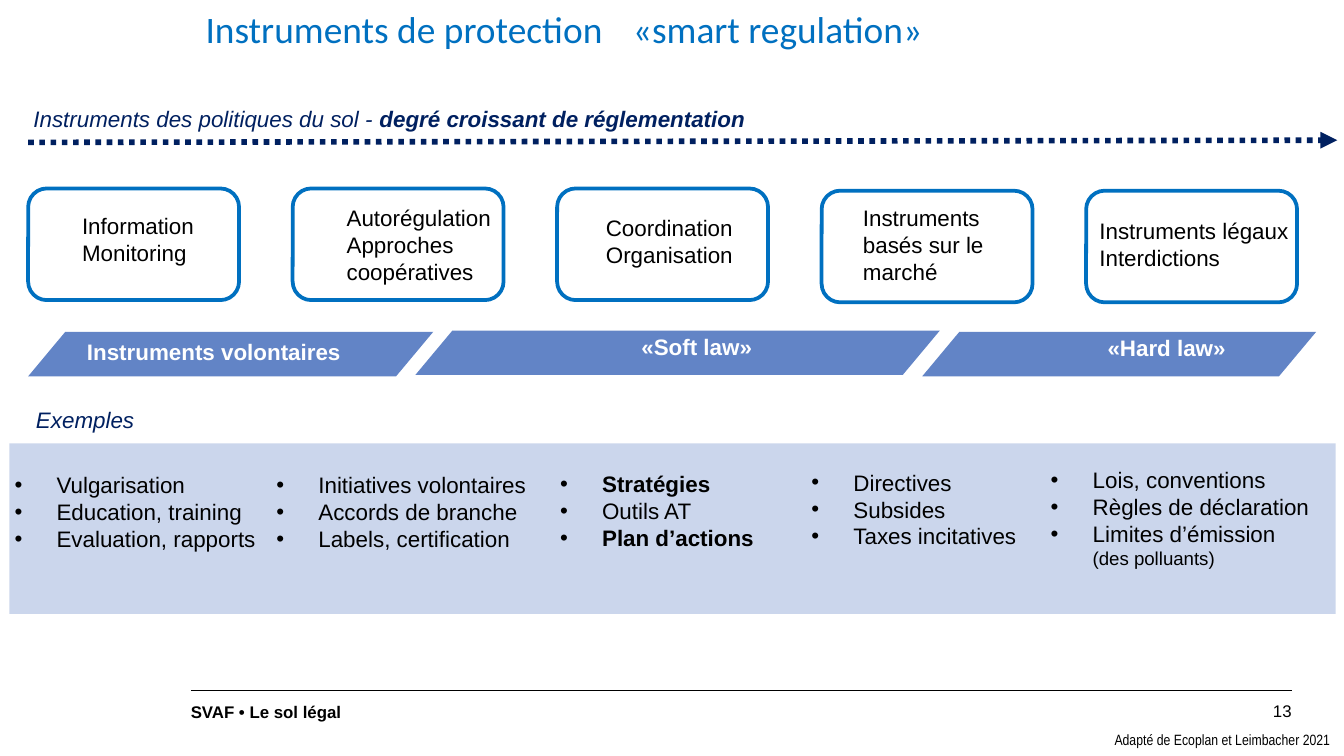
from dataclasses import dataclass

import pptx
import pptx.dml.color
import pptx.enum.dml
import pptx.enum.shapes
import pptx.enum.text
import pptx.oxml.xmlchemy
import pptx.util


@dataclass(frozen=True)
class Theme:
    black: str = "000000"
    white: str = "FFFFFF"
    navy: str = "002060"
    blue: str = "0070C0"
    band: str = "6284C6"
    panel: str = "CBD6EC"
    font: str = "Arial"
    title_font: str = "Calibri"
    source_font: str = "Arial Narrow"
    title: int = 20
    body: int = 12
    small: int = 10
    footer: int = 9
    source: int = 8


THEME = Theme()


def points(*lengths):
    return [pptx.util.Pt(length) for length in lengths]


def rgb(color):
    return pptx.dml.color.RGBColor.from_string(color)


def drawing_element(tag, **attributes):
    element = pptx.oxml.xmlchemy.OxmlElement(tag)
    for name, value in attributes.items():
        element.set(name, value)
    return element


def add_text(slide, box, paragraphs, size=THEME.body, color=THEME.black, font=THEME.font,
             align=pptx.enum.text.PP_ALIGN.LEFT, italic=False, bullet=False, inset=True,
             spacing=None):
    """Each paragraph is a list of (text, bold) or (text, bold, size) runs."""
    frame = slide.shapes.add_textbox(*points(*box)).text_frame
    frame.word_wrap = True
    if not inset:
        frame.margin_left = frame.margin_right = frame.margin_top = frame.margin_bottom = 0
    for index, runs in enumerate(paragraphs):
        paragraph = frame.add_paragraph() if index else frame.paragraphs[0]
        paragraph.alignment = align
        if spacing:
            paragraph.line_spacing = pptx.util.Pt(spacing)
        if bullet:
            properties = paragraph._p.get_or_add_pPr()
            indent = int(pptx.util.Pt(22.5))
            properties.set("marL", str(indent))
            properties.set("indent", str(-indent))
            properties.append(drawing_element("a:buFont", typeface=THEME.font))
            properties.append(drawing_element("a:buChar", char="•"))
        for text, bold, *own_size in runs:
            run = paragraph.add_run()
            run.text = text
            run.font.name = font
            run.font.size = pptx.util.Pt(own_size[0] if own_size else size)
            run.font.bold = bold
            run.font.italic = italic
            run.font.color.rgb = rgb(color)


def plain(*lines, bold=False):
    return [[(line, bold)] for line in lines]


def add_block(slide, kind, box, fill=None, line=None):
    block = slide.shapes.add_shape(kind, *points(*box))
    block.shadow.inherit = False
    if fill:
        block.fill.solid()
        block.fill.fore_color.rgb = rgb(fill)
    else:
        block.fill.background()
    if line:
        block.line.color.rgb = rgb(line)
        block.line.width = pptx.util.Pt(2)
    else:
        block.line.fill.background()
    return block


def add_rule(slide, start, end, color, width):
    rule = slide.shapes.add_connector(pptx.enum.shapes.MSO_CONNECTOR.STRAIGHT,
                                      *points(*start, *end))
    rule.line.color.rgb = rgb(color)
    rule.line.width = pptx.util.Pt(width)
    rule._element.spPr.append(drawing_element("a:effectLst"))
    return rule


def add_title(slide, box):
    left, top, width, height = box
    second = 229
    for offset, room, words in ((0, second, "Instruments de protection"),
                                (second, width - second, "«smart regulation»")):
        add_text(slide, (left + offset, top, room, height), plain(words),
                 THEME.title, THEME.blue, THEME.title_font)


def add_scale(slide, box):
    """Caption over the dotted arrow of growing regulation."""
    left, top, width, height = box
    add_text(slide, (left - 4.3, top, 397, 21.6),
             [[("Instruments des politiques du sol - ", False),
               ("degré croissant de réglementation", True)]],
             color=THEME.navy, italic=True)
    arrow = add_rule(slide, (left, top + height), (left + width, top + height - 1.2),
                     THEME.navy, 3)
    arrow.line.dash_style = pptx.enum.dml.MSO_LINE.ROUND_DOT
    arrow.line._get_or_add_ln().append(drawing_element("a:tailEnd", type="triangle"))


def add_instruments(slide, box):
    """Five equally spaced cards; the text has its own offset in each card."""
    left, top, width, height = box
    card_width = 113
    pitch = (width - card_width) / 4
    cards = (
        (0, 21.8, 9, 91, ("Information", "Monitoring")),
        (0, 21.8, 5, 115, ("Autorégulation", "Approches coopératives")),
        (0, 19, 10, 91, ("Coordination", "Organisation")),
        (1.2, 15, 3.7, 101.5, ("Instruments basés sur le marché",)),
        (1.2, 0, 10.8, 121.7, ("Instruments légaux", "Interdictions")),
    )
    for index, (drop, inset_x, inset_y, room, lines) in enumerate(cards):
        x, y = left + index * pitch, top + drop
        add_block(slide, pptx.enum.shapes.MSO_SHAPE.ROUNDED_RECTANGLE,
                  (x, y, card_width, height), line=THEME.blue)
        add_text(slide, (x + inset_x, y + inset_y, room, height - inset_y), plain(*lines))


def add_categories(slide, box):
    left, top, width, height = box
    categories = (
        (0, 0.7, 217, 7, 185, 0.7, "Instruments volontaires"),
        (207.4, 0, 281, 265.7, 185, -2.2, "«Soft law»"),
        (479, 0.7, width - 479, 482.4, 255, -1.5, "«Hard law»"),
    )
    for x, drop, band_width, text_x, room, text_y, words in categories:
        band = add_block(slide, pptx.enum.shapes.MSO_SHAPE.PARALLELOGRAM,
                         (left + x, top + drop, band_width, height), fill=THEME.band)
        band.adjustments[0] = 0.835
        add_text(slide, (left + text_x, top + text_y, room, 21.6), plain(words, bold=True),
                 color=THEME.white, align=pptx.enum.text.PP_ALIGN.CENTER)


def add_examples(slide, box):
    left, top, width, height = box
    add_text(slide, (left + 7.2, top - 23.8, 217, 21.6), plain("Exemples"),
             color=THEME.navy, italic=True)
    add_block(slide, pptx.enum.shapes.MSO_SHAPE.RECTANGLE, box, fill=THEME.panel)
    columns = (
        (-4.3, 11.5, 156, plain("Vulgarisation", "Education, training", "Evaluation, rapports")),
        (136, 11.5, 188, plain("Initiatives volontaires", "Accords de branche",
                               "Labels, certification")),
        (288, 10.8, 161, [[("Stratégies", True)], [("Outils AT", False)],
                          [("Plan d’actions", True)]]),
        (422.6, 10, 156, plain("Directives", "Subsides", "Taxes incitatives")),
        (550.8, 8.6, 156, [*plain("Lois, conventions", "Règles de déclaration"),
                           [("Limites d’émission ", False),
                            ("(des polluants)", False, THEME.small)]]),
    )
    for x, y, room, items in columns:
        add_text(slide, (left + x, top + y, room, height - 2 * y), items, bullet=True)


def add_footer(slide, box):
    left, top, width, height = box
    right_aligned = pptx.enum.text.PP_ALIGN.RIGHT
    add_rule(slide, (left, top), (left + width, top), THEME.black, 0.75)
    add_text(slide, (left, top + 5, 342, 9.4), plain("SVAF • Le sol légal", bold=True),
             THEME.footer, inset=False, spacing=12)
    add_text(slide, (left + width - 35, top + 4.3, 35, 10.8), plain("13"),
             THEME.footer, align=right_aligned, inset=False, spacing=12)
    add_text(slide, (566.6, top + 18, 153.4, height - 18),
             plain("Adapté de Ecoplan et Leimbacher 2021"),
             THEME.source, font=THEME.source_font, align=right_aligned)


def main():
    presentation = pptx.Presentation()
    presentation.slide_width, presentation.slide_height = points(720, 405)
    slide = presentation.slides.add_slide(presentation.slide_layouts[6])
    add_title(slide, (103, 0, 409, 31.7))
    add_scale(slide, (15.1, 52.6, 701.3, 23.7))
    add_instruments(slide, (15.1, 101, 679.8, 59.8))
    add_categories(slide, (15.1, 177.1, 690, 23.8))
    add_examples(slide, (5, 237.6, 710.6, 91.4))
    add_footer(slide, (102.2, 370, 589.7, 35))
    presentation.save("out.pptx")


if __name__ == "__main__":
    main()
